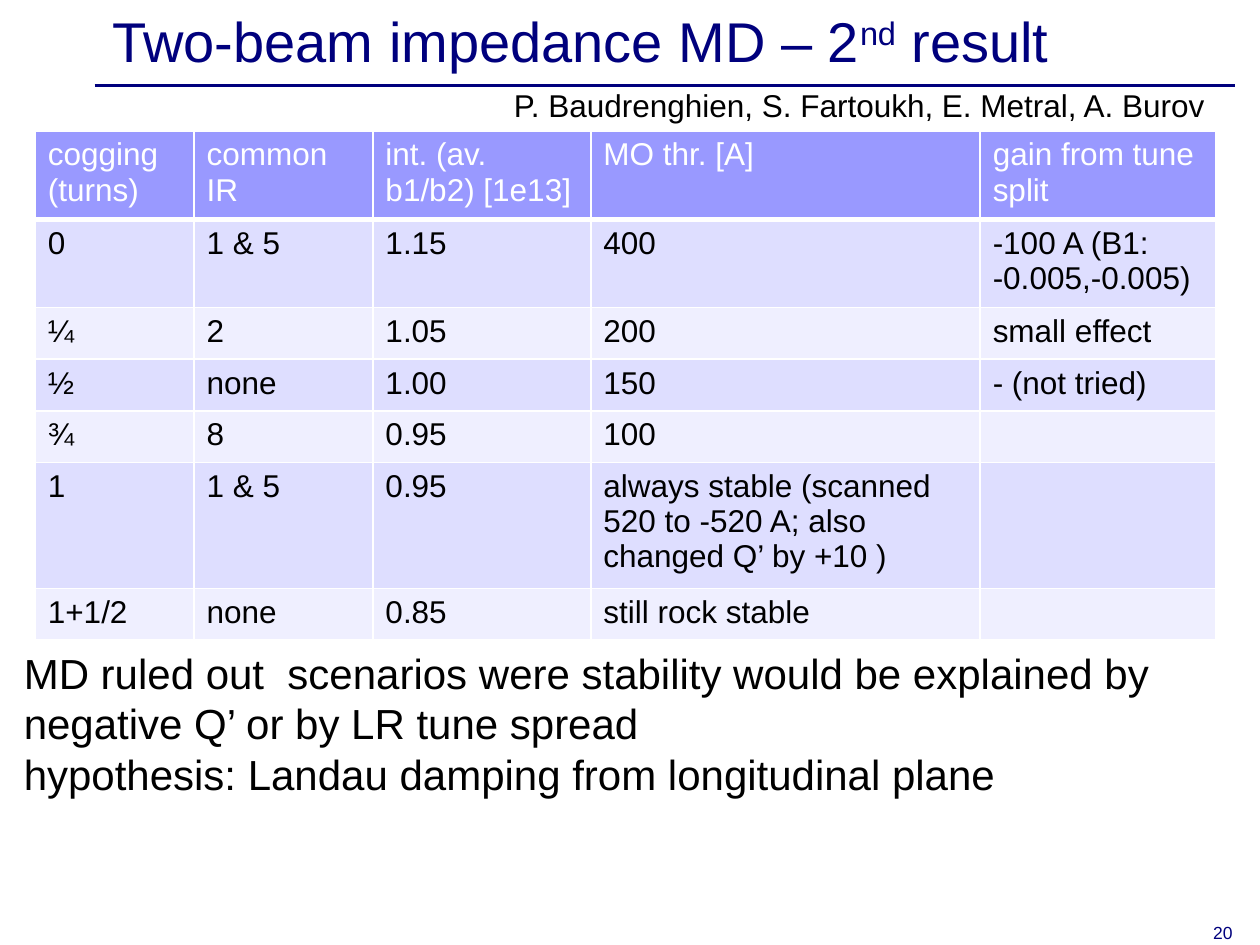
from lxml import etree
from pptx import Presentation
from pptx.dml.color import RGBColor
from pptx.enum.shapes import MSO_CONNECTOR
from pptx.enum.text import MSO_ANCHOR, PP_ALIGN
from pptx.oxml.ns import qn
from pptx.util import Inches, Pt

STRAIGHT = MSO_CONNECTOR.STRAIGHT
LEFT, RIGHT = PP_ALIGN.LEFT, PP_ALIGN.RIGHT
TOP, BOTTOM = MSO_ANCHOR.TOP, MSO_ANCHOR.BOTTOM

FONT = "Arial"
COLORS = {
    "navy": "00007D",
    "text": "000000",
    "white": "FFFFFF",
    "header": "9999FF",
    "band_dark": "DEDEFF",
    "band_light": "EFEFFF",
}

COL_WIDTHS = [1.26, 1.42, 1.73, 3.09, 1.87]
ROW_HEIGHT = 0.41
ROWS = [
    ["cogging (turns)", "common\nIR", "int. (av. b1/b2) [1e13]", "MO thr. [A]",
     "gain from tune split"],
    ["0", "1 & 5", "1.15", "400", "-100 A (B1:\n-0.005,-0.005)"],
    ["¼", "2", "1.05", "200", "small effect"],
    ["½", "none", "1.00", "150", "- (not tried)"],
    ["¾", "8", "0.95", "100", ""],
    ["1", "1 & 5", "0.95",
     "always stable (scanned 520 to -520 A; also changed Q’ by +10 )", ""],
    ["1+1/2", "none", "0.85", "still rock stable", ""],
]


def rgb(name):
    return RGBColor.from_string(COLORS[name])


def style_paragraph(p, size, color, align=LEFT):
    p.alignment = align
    p.font.name = FONT
    p.font.size = Pt(size)
    p.font.color.rgb = rgb(color)


def add_text(s, box, text, size, color, align=LEFT, anchor=TOP, wrap=True):
    tf = s.shapes.add_textbox(*map(Inches, box)).text_frame
    tf.word_wrap = wrap
    tf.vertical_anchor = anchor
    tf.text = text
    for p in tf.paragraphs:
        style_paragraph(p, size, color, align)
    return tf


def add_rule(s, x1, x2, y, color, width):
    line = s.shapes.add_connector(STRAIGHT, Inches(x1), Inches(y), Inches(x2), Inches(y))
    line.line.color.rgb = rgb(color)
    line.line.width = Pt(width)
    etree.SubElement(line._element.spPr, qn("a:effectLst"))


def add_title(s):
    tf = add_text(s, (0.67, 0, 9.5, 0.57), "Two-beam impedance MD – 2", 32, "navy")
    tf.margin_left = Inches(0.22)
    p = tf.paragraphs[0]
    for text, baseline in (("nd", "30000"), (" result", "0")):
        r = p.add_run()
        r.text = text
        r.font._element.set("baseline", baseline)


def set_borders(cell, widths):
    tcPr = cell._tc.get_or_add_tcPr()
    for side, width in zip("LRTB", widths):
        ln = etree.SubElement(tcPr, qn(f"a:ln{side}"), w=str(Pt(width)))
        fill = etree.SubElement(ln, qn("a:solidFill"))
        etree.SubElement(fill, qn("a:srgbClr"), val=COLORS["white"])


def add_results_table(s, left, top):
    frame = s.shapes.add_table(
        len(ROWS), len(COL_WIDTHS), Inches(left), Inches(top),
        Inches(sum(COL_WIDTHS)), Inches(ROW_HEIGHT * len(ROWS)))
    table = frame.table
    table.first_row = table.horz_banding = False
    for column, width in zip(table.columns, COL_WIDTHS):
        column.width = Inches(width)
    for i, row in enumerate(ROWS):
        table.rows[i].height = Inches(ROW_HEIGHT)
        fill = "header" if i == 0 else "band_dark" if i % 2 else "band_light"
        # The rule under the header is heavier than the grid
        widths = (1, 1, 3 if i == 1 else 1, 3 if i == 0 else 1)
        for j, text in enumerate(row):
            cell = table.cell(i, j)
            set_borders(cell, widths)
            cell.fill.solid()
            cell.fill.fore_color.rgb = rgb(fill)
            cell.text = text
            for p in cell.text_frame.paragraphs:
                style_paragraph(p, 18, "text" if i else "white")


def main():
    prs = Presentation()
    prs.slide_width, prs.slide_height = Inches(10), Inches(7.5)
    s = prs.slides.add_slide(prs.slide_layouts[6])

    # Rule and page number
    add_rule(s, 0.75, 9.8, 0.68, "navy", 2)
    add_text(s, (7.55, 7.25, 2.33, 0.28), "20", 10, "navy", RIGHT, BOTTOM)

    # Measurements and conclusions
    add_results_table(s, 0.28, 1.04)
    add_text(s, (0.09, 5.09, 10.08, 1.31),
             "MD ruled out  scenarios were stability would be explained by "
             "negative Q’ or by LR tune spread\n"
             "hypothesis: Landau damping from longitudinal plane", 24, "text")

    # Title and authors
    add_title(s)
    add_text(s, (3.98, 0.63, 5.81, 0.4),
             "P. Baudrenghien, S. Fartoukh, E. Metral, A. Burov", 18, "text", wrap=False)

    prs.save("out.pptx")


if __name__ == "__main__":
    main()
